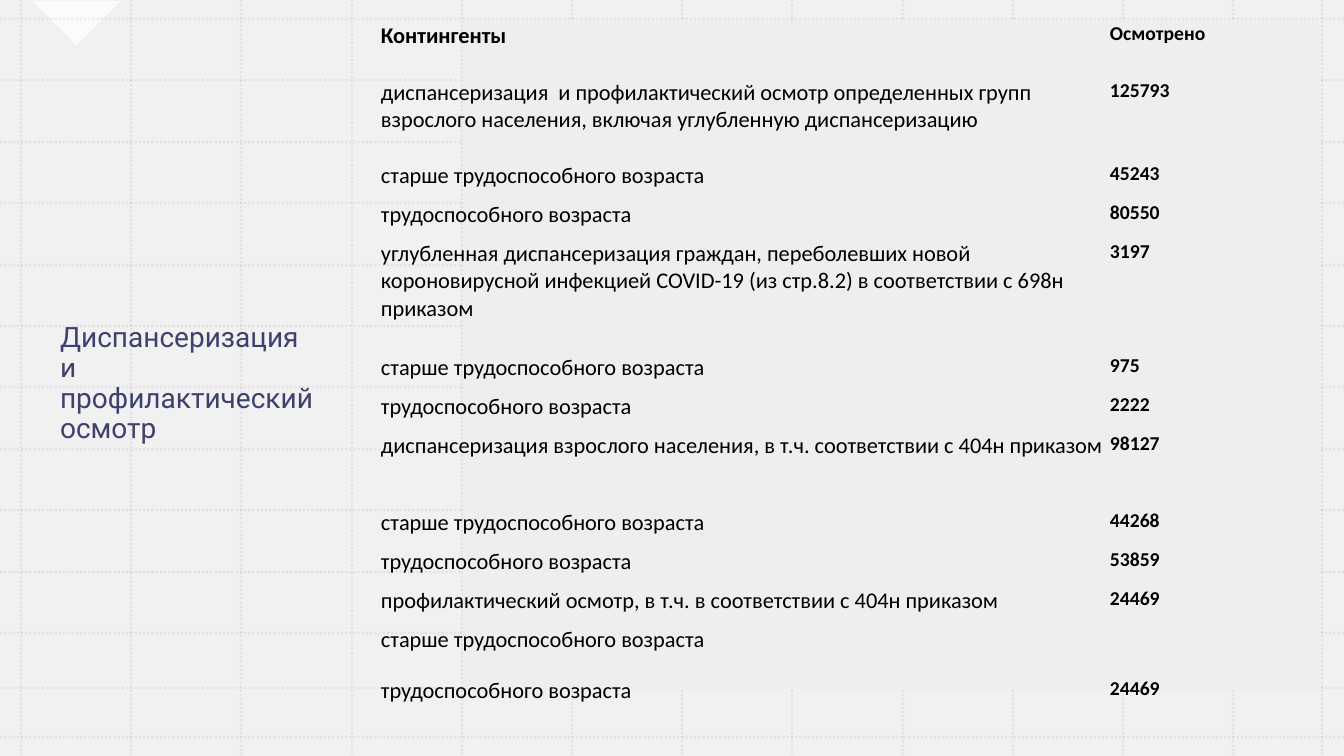
from lxml import etree
from pptx import Presentation
from pptx.dml.color import RGBColor
from pptx.enum.dml import MSO_LINE
from pptx.enum.shapes import MSO_CONNECTOR, MSO_SHAPE
from pptx.enum.text import MSO_ANCHOR, MSO_AUTO_SIZE, PP_ALIGN
from pptx.oxml.ns import qn
from pptx.util import Emu, Pt

RECTANGLE = MSO_SHAPE.RECTANGLE
RIGHT_TRIANGLE = MSO_SHAPE.RIGHT_TRIANGLE
STRAIGHT = MSO_CONNECTOR.STRAIGHT
DOTTED = MSO_LINE.ROUND_DOT
MIDDLE = MSO_ANCHOR.MIDDLE
TOP = MSO_ANCHOR.TOP
NO_FIT = MSO_AUTO_SIZE.NONE
LEFT = PP_ALIGN.LEFT

WIDTH, HEIGHT = 1344, 756
EMU_PER_PX = 914400 / 100.8
PLAIN_TABLE = "{2D5ABB26-0587-4C30-8999-92F81FD0307C}"
COLORS = {
    "white": "FFFFFF",
    "panel": "EEEEEE",
    "grid": "B495C2",
    "title": "12154E",
    "text": "000000",
}

OLDER = "старше трудоспособного возраста"
WORKING = "трудоспособного возраста"
EXAMINED = [
    (57, "Контингенты", "Осмотрено"),
    (83, "диспансеризация  и профилактический осмотр определенных групп "
         "взрослого населения, включая углубленную диспансеризацию", "125793"),
    (39, OLDER, "45243"),
    (39, WORKING, "80550"),
    (114, "углубленная диспансеризация граждан, переболевших новой "
          "короновирусной инфекцией COVID-19 (из стр.8.2) в соответствии "
          "с 698н приказом", "3197"),
    (39, OLDER, "975"),
    (39, WORKING, "2222"),
    (77, "диспансеризация взрослого населения, в т.ч. соответствии "
         "с 404н приказом", "98127"),
    (39, OLDER, "44268"),
    (39, WORKING, "53859"),
    (39, "профилактический осмотр, в т.ч. в соответствии с 404н приказом",
     "24469"),
    (51, OLDER, ""),
    (39, WORKING, "24469"),
]


def px(length):
    return Emu(round(length * EMU_PER_PX))


class SlideBuilder:
    def __init__(self, slide):
        self.slide = slide
        self.shapes = slide.shapes

    def paint(self, fill, color, opacity=100):
        fill.solid()
        fill.fore_color.rgb = RGBColor.from_string(COLORS[color])
        if opacity < 100:
            rgb = fill._xPr.find(".//" + qn("a:srgbClr"))
            etree.SubElement(rgb, qn("a:alpha"), val=str(opacity * 1000))

    def style_text(self, paragraph, font_name, size, color, opacity=100, bold=False):
        paragraph.alignment = LEFT
        for run in paragraph.runs:
            run.font.name = font_name
            run.font.size = Pt(size)
            run.font.bold = bold
            self.paint(run.font.fill, color, opacity)

    def block(self, preset, box, color, opacity=100, rotation=0):
        shape = self.shapes.add_shape(preset, *map(px, box))
        shape.shadow.inherit = False
        shape.line.fill.background()
        shape.rotation = rotation
        self.paint(shape.fill, color, opacity)

    def grid_line(self, x1, y1, x2, y2):
        line = self.shapes.add_connector(STRAIGHT, px(x1), px(y1), px(x2), px(y2))
        line.line.width = Pt(1.5)
        self.paint(line.line.fill, "grid", 20)
        line.line.dash_style = DOTTED
        etree.SubElement(line._element.spPr, qn("a:effectLst"))

    def grid(self):
        columns = [round(21 + 110.2 * i) for i in range(12)] + [1322]
        rows = [round(19 + 61.4 * i) for i in range(11)] + [688, 737]
        for x in columns:
            self.grid_line(x, 0, x, HEIGHT)
        for y in rows:
            self.grid_line(0, y, WIDTH, y)

    def title(self, text, box):
        heading = self.shapes.title
        self.shapes._spTree.append(heading._element)
        heading.left, heading.top, heading.width, heading.height = map(px, box)
        frame = heading.text_frame
        frame.text = text
        frame.word_wrap = True
        frame.auto_size = NO_FIT
        frame.vertical_anchor = MIDDLE
        frame.paragraphs[0].line_spacing = 0.9
        self.style_text(frame.paragraphs[0], "Roboto", 20, "title", 80)

    def cell(self, cell, text, size, bold):
        cell.fill.background()
        cell.margin_left = cell.margin_right = cell.margin_top = px(1)
        cell.margin_bottom = 0
        cell.vertical_anchor = TOP
        cell.text_frame.text = text
        self.style_text(cell.text_frame.paragraphs[0], "Calibri", size, "text", bold=bold)

    def table(self, left, top, column_widths, rows):
        height = sum(row[0] for row in rows)
        frame = self.shapes.add_table(
            len(rows), len(column_widths),
            px(left), px(top), px(sum(column_widths)), px(height))
        table = frame.table
        table.first_row = False
        table.horz_banding = False
        table._tbl.tblPr.find(qn("a:tableStyleId")).text = PLAIN_TABLE
        for column, width in zip(table.columns, column_widths):
            column.width = px(width)
        for index, (row_height, group, count) in enumerate(rows):
            table.rows[index].height = px(row_height)
            self.cell(table.cell(index, 0), group, 16, index == 0)
            self.cell(table.cell(index, 1), count, 14, True)


def main():
    deck = Presentation()
    deck.slide_width, deck.slide_height = px(WIDTH), px(HEIGHT)
    builder = SlideBuilder(deck.slides.add_slide(deck.slide_layouts[5]))
    builder.block(RECTANGLE, (0, 0, WIDTH, HEIGHT), "white")
    builder.block(RECTANGLE, (0, 0, WIDTH, HEIGHT), "panel", 80)
    builder.block(RIGHT_TRIANGLE, (45, -31, 63, 63), "white", 75, 315)
    builder.grid()
    builder.title("Диспансеризация и профилактический осмотр", (50, 79, 280, 610))
    builder.block(RECTANGLE, (463, 21, 856, 669), "panel")
    builder.table(380, 21, (729, 168), EXAMINED)
    deck.save("out.pptx")


if __name__ == "__main__":
    main()
